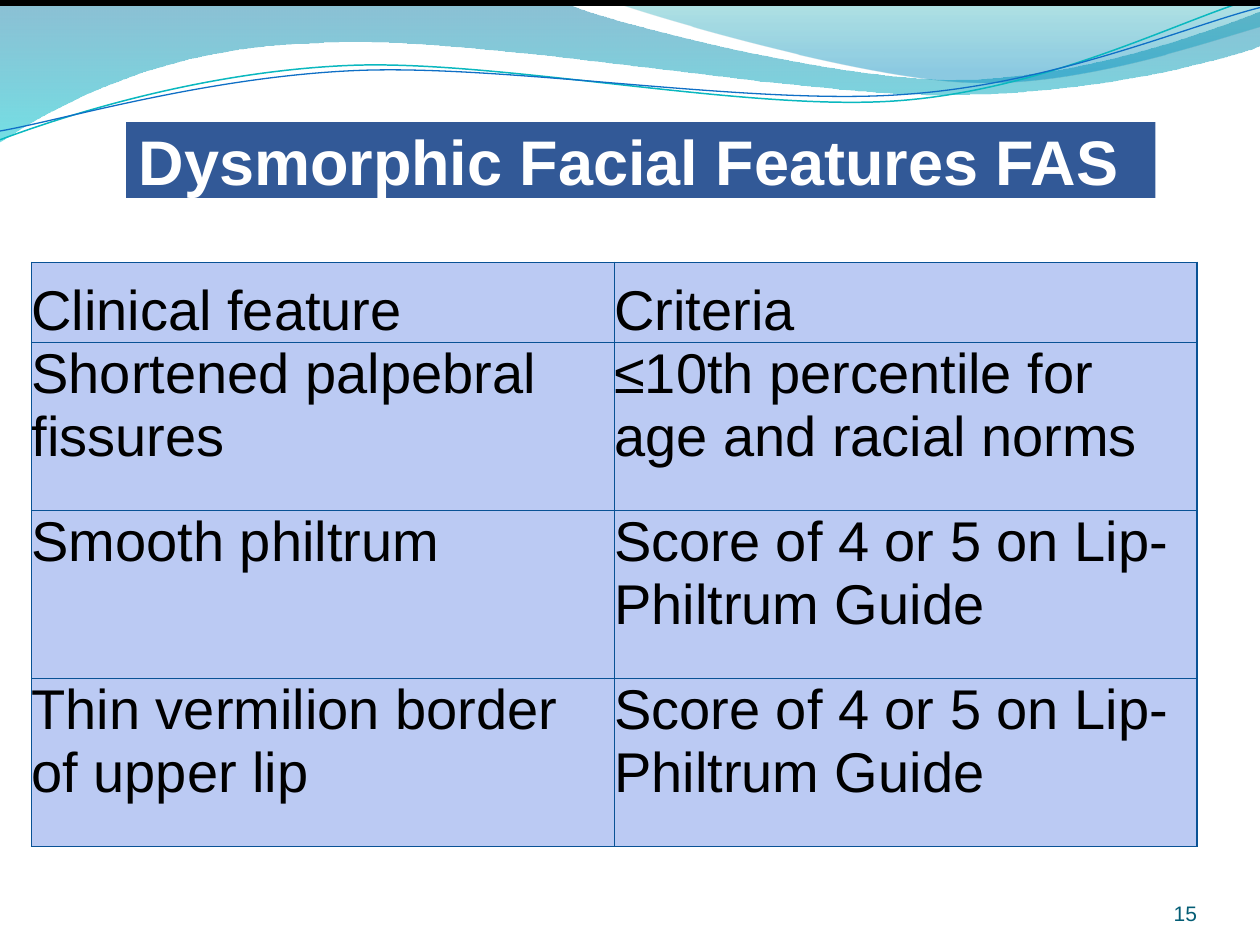
"""Build the slide on dysmorphic facial features in FAS."""
from dataclasses import dataclass
from itertools import chain
from typing import NamedTuple

from lxml.etree import SubElement
from pptx import Presentation
from pptx.dml.color import RGBColor
from pptx.enum.shapes import MSO_SHAPE
from pptx.enum.text import MSO_ANCHOR, MSO_AUTO_SIZE, PP_ALIGN
from pptx.oxml.ns import qn
from pptx.util import Emu, Inches, Pt

GRID = Inches(1)
COLUMNS, ROWS = 10, 7.5


@dataclass(frozen=True)
class Theme:
    font: str = "Arial"
    title_size: int = 36
    table_size: int = 32
    number_size: int = 12
    banner: str = "325997"
    banner_text: str = "FFFFFF"
    cell: str = "BBCAF3"
    cell_text: str = "000000"
    border: str = "095295"
    number: str = "045D75"
    edge: str = "000000"
    hairline: float = 0.75


class Box(NamedTuple):
    left: float
    top: float
    width: float
    height: float

    def emu(self) -> list[Emu]:
        return [Emu(round(length * GRID)) for length in self]


class Stop(NamedTuple):
    position: float
    color: str
    opacity: int


class Wave(NamedTuple):
    start: tuple
    segments: list
    stops: tuple


class Strand(NamedTuple):
    start: tuple
    segments: list
    color: str
    width: float


THEME = Theme()
WAVES = [
    Wave((0, 0), [
        [(4.4, -0.01)],
        [(4.76, 0.17), (6.64, 0.63), (7.58, 0.63)],
        [(8.53, 0.63), (9.58, 0.26), (10, 0.09)],
        [(10.01, 0.36)],
        [(9.83, 0.44), (8.7, 0.76), (7.46, 0.75)],
        [(6.22, 0.75), (3.82, 0.28), (2.57, 0.34)],
        [(1.29, 0.36), (0.46, 0.83), (-0.01, 1.13)],
        [(0, 0)],
    ], (Stop(0, "0074A1", 45), Stop(1, "00C6CF", 55))),
    Wave((4.79, -0.01), [
        [(5.09, 0.11), (6.82, 0.62), (7.69, 0.65)],
        [(8.56, 0.69), (9.61, 0.32), (10, 0.21)],
        [(10, 0)],
        [(4.79, -0.01)],
    ], (Stop(0, "00A1A9", 30), Stop(0.8, "008BBF", 45))),
]
STRANDS = [
    Strand((0, 1.11), [
        [(0.48, 0.93), (1.58, 0.57), (2.77, 0.52)],
        [(3.95, 0.47), (5.93, 0.89), (7.13, 0.8)],
        [(8.33, 0.71), (9.38, 0.15), (9.98, -0.02)],
    ], "0AB8BF", 0.85),
    Strand((0, 1.04), [
        [(0.47, 0.96), (1.64, 0.61), (2.83, 0.56)],
        [(4.03, 0.51), (5.97, 0.84), (7.17, 0.75)],
        [(8.36, 0.67), (9.41, 0.21), (10, 0.06)],
    ], "0F6FC6", 0.75),
]
FEATURES = [
    ("Clinical feature", "Criteria"),
    ("Shortened palpebral fissures", "≤10th percentile for age and racial norms"),
    ("Smooth philtrum", "Score of 4 or 5 on Lip-Philtrum Guide"),
    ("Thin vermilion border of upper lip", "Score of 4 or 5 on Lip-Philtrum Guide"),
]
TABLE_BOX = Box(0.25, 2.08, 9.25, 4.64)
HEADER_HEIGHT = 0.64
TITLE_BOX = Box(1, 0.97, 8.17, 0.6)
NUMBER_BOX = Box(8.67, 6.95, 0.83, 0.4)
EDGE_HEIGHT = 0.02


def rgb(color: str) -> RGBColor:
    return RGBColor.from_string(color)


def add_outline(slide, start: tuple, segments: list, closed: bool):
    """Draw an outline whose three-point segments are cubic curves."""
    points = [(x * GRID, y * GRID) for x, y in [start, *chain(*segments)]]
    builder = slide.shapes.build_freeform(*points[0])
    builder.add_line_segments(points[1:], close=closed)
    outline = builder.convert_to_shape()
    outline.shadow.inherit = False
    lines = iter(outline._element.spPr.findall(f".//{qn('a:lnTo')}"))
    for segment in segments:
        first, *others = [next(lines) for _ in segment]
        if others:
            first.tag = qn("a:cubicBezTo")
        for line in others:
            first.append(line[0])
            line.getparent().remove(line)
    return outline


def add_wave(slide, wave: Wave) -> None:
    outline = add_outline(slide, wave.start, wave.segments, True)
    outline.line.fill.background()
    outline.fill.gradient()
    outline.fill.gradient_angle = 270
    for gradient_stop, stop in zip(outline.fill.gradient_stops, wave.stops):
        gradient_stop.position = stop.position
        gradient_stop.color.rgb = rgb(stop.color)
    colors = outline._element.spPr.findall(f".//{qn('a:gs')}/{qn('a:srgbClr')}")
    for color, stop in zip(colors, wave.stops):
        SubElement(color, qn("a:alpha"), val=str(stop.opacity * 1000))


def add_strand(slide, strand: Strand) -> None:
    outline = add_outline(slide, strand.start, strand.segments, False)
    outline.fill.background()
    outline.line.color.rgb = rgb(strand.color)
    outline.line.width = Pt(strand.width)


def add_edge(slide, top: float) -> None:
    box = Box(0, top, COLUMNS, EDGE_HEIGHT)
    edge = slide.shapes.add_shape(MSO_SHAPE.RECTANGLE, *box.emu())
    edge.shadow.inherit = False
    edge.fill.solid()
    edge.fill.fore_color.rgb = rgb(THEME.edge)
    edge.line.color.rgb = rgb(THEME.edge)
    edge.line.width = Pt(THEME.hairline)


def set_text(frame, text: str, size: int, color: str, bold: bool = False,
             align: PP_ALIGN = PP_ALIGN.LEFT) -> None:
    frame.text = text
    paragraph = frame.paragraphs[0]
    paragraph.alignment = align
    paragraph.font.name = THEME.font
    paragraph.font.size = Pt(size)
    paragraph.font.bold = bold
    paragraph.font.color.rgb = rgb(color)


def set_title(slide) -> None:
    title = slide.shapes.title
    title.left, title.top, title.width, title.height = TITLE_BOX.emu()
    title.fill.solid()
    title.fill.fore_color.rgb = rgb(THEME.banner)
    frame = title.text_frame
    frame.auto_size = MSO_AUTO_SIZE.NONE
    frame.vertical_anchor = MSO_ANCHOR.MIDDLE
    frame.margin_top = frame.margin_bottom = 0
    set_text(frame, "Dysmorphic Facial Features FAS", THEME.title_size,
             THEME.banner_text, bold=True)


def style_cell(cell) -> None:
    cell.margin_left = cell.margin_right = cell.margin_top = cell.margin_bottom = 0
    properties = cell._tc.get_or_add_tcPr()
    for side in "LRTB":
        border = SubElement(properties, qn(f"a:ln{side}"), w=str(Pt(THEME.hairline)))
        SubElement(SubElement(border, qn("a:solidFill")), qn("a:srgbClr"), val=THEME.border)
    cell.fill.solid()
    cell.fill.fore_color.rgb = rgb(THEME.cell)


def add_features(slide) -> None:
    table = slide.shapes.add_table(len(FEATURES), len(FEATURES[0]), *TABLE_BOX.emu()).table
    table.first_row = table.horz_banding = False
    body_height = (TABLE_BOX.height - HEADER_HEIGHT) / (len(FEATURES) - 1)
    for index, (row, texts) in enumerate(zip(table.rows, FEATURES)):
        row.height = Inches(body_height if index else HEADER_HEIGHT)
        for cell, text in zip(row.cells, texts):
            style_cell(cell)
            cell.vertical_anchor = MSO_ANCHOR.TOP if index else MSO_ANCHOR.BOTTOM
            set_text(cell.text_frame, text, THEME.table_size, THEME.cell_text)


def add_number(slide) -> None:
    frame = slide.shapes.add_textbox(*NUMBER_BOX.emu()).text_frame
    frame.word_wrap = True
    frame.vertical_anchor = MSO_ANCHOR.BOTTOM
    frame.margin_left = frame.margin_right = frame.margin_top = frame.margin_bottom = 0
    set_text(frame, "15", THEME.number_size, THEME.number, align=PP_ALIGN.RIGHT)


def main() -> None:
    deck = Presentation()
    deck.slide_width, deck.slide_height = COLUMNS * GRID, Emu(int(ROWS * GRID))
    slide = deck.slides.add_slide(deck.slide_layouts.get_by_name("Title Only"))
    for wave in WAVES:
        add_wave(slide, wave)
    for strand in STRANDS:
        add_strand(slide, strand)
    add_features(slide)
    set_title(slide)
    for order in range(2):
        add_edge(slide, order * EDGE_HEIGHT)
    add_number(slide)
    deck.save("out.pptx")


if __name__ == "__main__":
    main()
